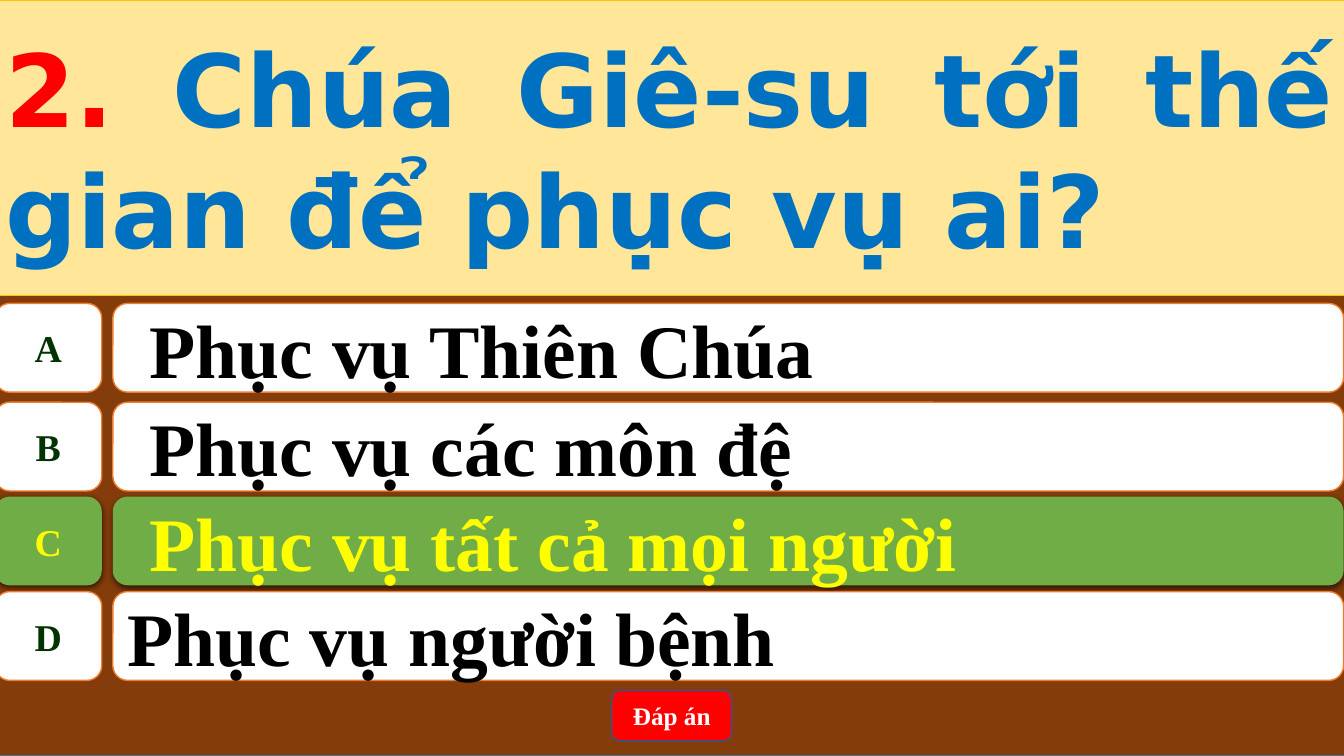
from lxml import etree
from pptx import Presentation
from pptx import util as u
from pptx.dml.color import RGBColor
from pptx.enum import shapes, text
from pptx.oxml import ns

BROWN = RGBColor(0x84, 0x3C, 0x0B)
STEEL = RGBColor(0x43, 0x73, 0x9E)
WHITE = RGBColor(0xFF, 0xFF, 0xFF)
BLACK = RGBColor(0, 0, 0)
ORANGE = RGBColor(0xED, 0x7D, 0x31)
FOREST = RGBColor(0, 0x33, 0)
GREEN = RGBColor(0x70, 0xAD, 0x47)
YELLOW = RGBColor(0xFF, 0xFF, 0)
RED = RGBColor(0xFF, 0, 0)
NAVY = RGBColor(0x32, 0x54, 0x91)
CREAM = RGBColor(0xFF, 0xE6, 0x99)
GOLD = RGBColor(0xFF, 0xC0, 0)
BLUE = RGBColor(0, 0x70, 0xC0)

KIND = shapes.MSO_SHAPE
ALIGN = text.PP_ALIGN
LEFT, WIDE = -3.6, 964
ROWS = [
    ("A", "Phục vụ Thiên Chúa", 216.7, True, False),
    ("B", "Phục vụ các môn đệ", 287.3, True, False),
    ("C", "Phục vụ tất cả mọi người", 354.7, True, True),
    ("D", "Phục vụ người bệnh", 422.6, False, False),
]


class Quiz:
    serif = "Times New Roman"
    sans = "DejaVu Sans"

    def __init__(self, deck):
        self.slide = deck.slides.add_slide(deck.slide_layouts[5])

    def paint(self, shape, fill, line=None, width=1):
        shape.fill.solid()
        shape.fill.fore_color.rgb = fill
        if line is None:
            shape.line.fill.background()
        else:
            shape.line.color.rgb = line
            shape.line.width = u.Pt(width)

    def box(self, home, kind, area, fill, line=None):
        shape = home.add_shape(kind, *map(u.Pt, area))
        shape.shadow.inherit = False
        self.paint(shape, fill, line)
        return shape

    def label(self, shape, words, size, color, align=ALIGN.LEFT, wrap=True):
        frame = shape.text_frame
        frame.word_wrap = wrap
        frame.vertical_anchor = text.MSO_ANCHOR.MIDDLE
        par = frame.paragraphs[0]
        par.text = words
        par.alignment = align
        font = par.font
        font.name, font.size, font.bold = self.serif, u.Pt(size), True
        font.color.rgb = color
        return par

    def indent(self, par):
        par.level = 1
        props = par._p.get_or_add_pPr()
        props.set("marL", str(u.Pt(36)))
        props.set("indent", str(u.Pt(-20)))

    def shade(self, shape):
        effects = shape._element.spPr.find(ns.qn("a:effectLst"))
        outer = etree.SubElement(
            effects, ns.qn("a:outerShdw"), blurRad=str(u.Pt(4.5)),
            dist=str(u.Pt(1.5)), dir="5400000", rotWithShape="0")
        color = etree.SubElement(outer, ns.qn("a:srgbClr"), val="000000")
        etree.SubElement(color, ns.qn("a:alpha"), val="63000")

    def title(self, number, words):
        title = self.slide.shapes.title
        title.left, title.top = u.Pt(LEFT), u.Pt(0)
        title.width, title.height = u.Pt(WIDE), u.Pt(211)
        self.paint(title, CREAM, GOLD, 0.5)
        frame = title.text_frame
        frame.auto_size = text.MSO_AUTO_SIZE.NONE
        frame.vertical_anchor = text.MSO_ANCHOR.MIDDLE
        par = frame.paragraphs[0]
        par.alignment = ALIGN.JUSTIFY
        par.font.name, par.font.size, par.font.bold = self.sans, u.Pt(72), True
        for part, color in ((number, RED), (words, BLUE)):
            run = par.add_run()
            run.text = part
            run.font.color.rgb = color
        node = title._element
        node.getparent().append(node)

    def row(self, letter, words, top, inset, right):
        fill, line = (GREEN, None) if right else (WHITE, ORANGE)
        group = self.slide.shapes.add_group_shape().shapes
        bar = self.box(group, KIND.ROUNDED_RECTANGLE,
                       (80.6, top, 879.1, 63.4), fill, line)
        key = self.box(group, KIND.FLOWCHART_ALTERNATE_PROCESS,
                       (LEFT, top, 76.3, 63.4), fill, line)
        par = self.label(bar, words, 54, YELLOW if right else BLACK)
        if inset:
            self.indent(par)
        self.label(key, letter, 27, YELLOW if right else FOREST,
                   ALIGN.CENTER, False)
        if right:
            self.shade(bar)
            self.shade(key)

    def button(self, words):
        shape = self.box(self.slide.shapes, KIND.ROUNDED_RECTANGLE,
                         (437, 493.2, 85.7, 36), RED, NAVY)
        self.label(shape, words, 18, WHITE, ALIGN.CENTER)


def main():
    deck = Presentation()
    deck.slide_width, deck.slide_height = u.Pt(960), u.Pt(540)
    quiz = Quiz(deck)
    quiz.box(quiz.slide.shapes, KIND.RECTANGLE, (LEFT, 0, WIDE, 540),
             BROWN, STEEL)
    quiz.title("2. ", "Chúa Giê-su tới thế gian để phục vụ ai?")
    for row in ROWS:
        quiz.row(*row)
    quiz.button("Đáp án")
    deck.save("out.pptx")


if __name__ == "__main__":
    main()
